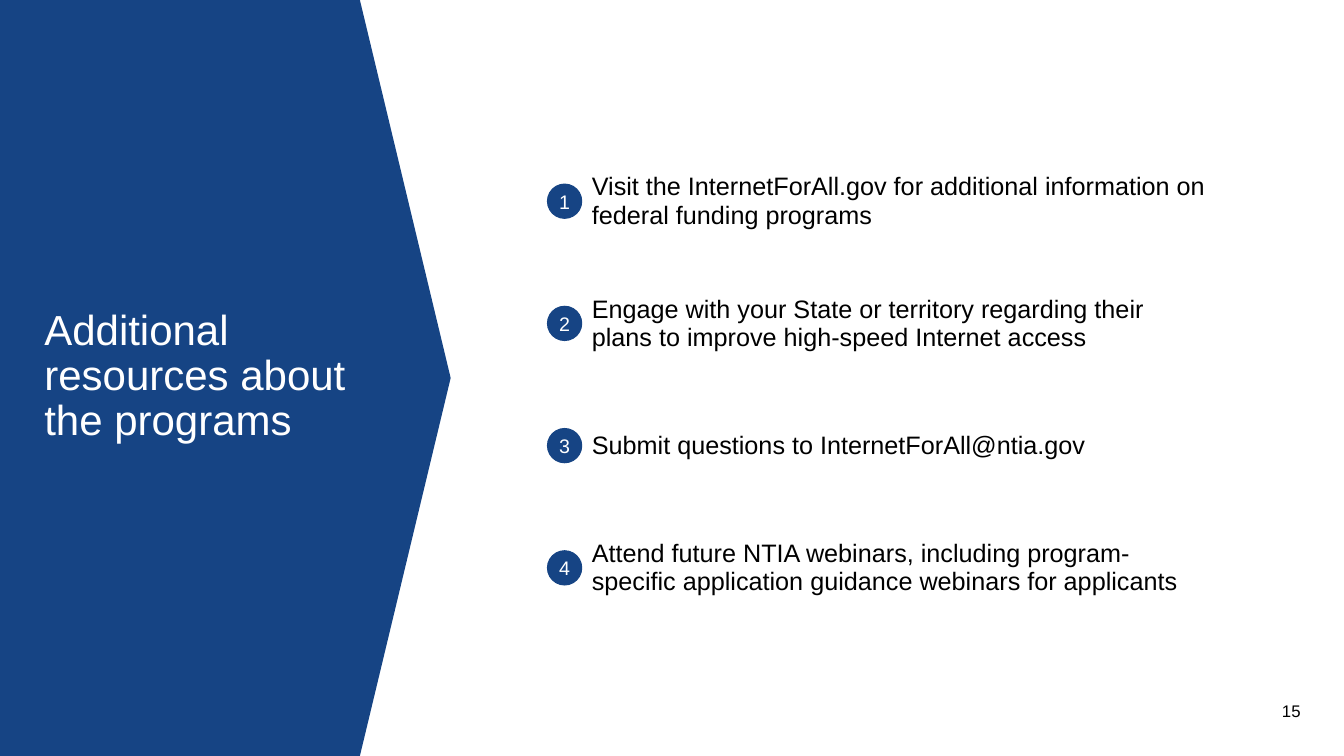
from pptx import Presentation
from pptx import util as u
from pptx.dml.color import RGBColor
from pptx.enum import shapes, text

TITLE = "Additional resources about the programs"
PAGE = "15"
STEPS = [
    "Visit the InternetForAll.gov for additional information on federal funding programs",
    "Engage with your State or territory regarding their plans to improve high-speed Internet access",
    "Submit questions to InternetForAll@ntia.gov",
    "Attend future NTIA webinars, including program-specific application guidance webinars for applicants",
]
COLORS = {"navy": "164484", "white": "FFFFFF", "black": "000000"}
FONT = "Arial"
SCALE = 9144  # EMU per px, 100 px to the inch
WIDE, HIGH = 1333, 750
EDGE, TIP = 357, 447
LEFT, TOP, TALL = 542, 139, 485
COLS = (35, 632)
DOT = 34


def px(*sizes):
    return [u.Emu(round(size * SCALE)) for size in sizes]


def color(name):
    return RGBColor.from_string(COLORS[name])


def paint(shape, name):
    shape.shadow.inherit = False
    shape.fill.solid()
    shape.fill.fore_color.rgb = color(name)


def write(frame, words, size, tint, align=text.PP_ALIGN.LEFT):
    frame.text = words
    para = frame.paragraphs[0]
    para.alignment = align
    font = para.runs[0].font
    font.name, font.size, font.color.rgb = FONT, u.Pt(size), color(tint)
    return para


def center(frame):
    """Remove the insets and anchor the text in the middle."""
    frame.margin_left = frame.margin_right = 0
    frame.margin_top = frame.margin_bottom = 0
    frame.vertical_anchor = text.MSO_ANCHOR.MIDDLE


def label(slide, box, *style):
    frame = slide.shapes.add_textbox(*px(*box)).text_frame
    frame.word_wrap = True
    center(frame)
    return write(frame, *style)


def add_panel(slide):
    build = slide.shapes.build_freeform(0, 0, scale=SCALE)
    build.add_line_segments([(EDGE, 0), (TIP, HIGH / 2), (EDGE, HIGH), (0, HIGH)])
    panel = build.convert_to_shape()
    paint(panel, "navy")
    panel.line.fill.background()


def add_steps(slide):
    row = TALL / len(STEPS)
    table = slide.shapes.add_table(
        len(STEPS), len(COLS), *px(LEFT, TOP, sum(COLS), TALL)).table
    table.first_row = table.horz_banding = False
    for col, width in zip(table.columns, px(*COLS)):
        col.width = width
    for i, step in enumerate(STEPS):
        for cell in table.rows[i].cells:
            cell.fill.background()
            cell.vertical_anchor = text.MSO_ANCHOR.MIDDLE
        write(table.cell(i, 1).text_frame, step, 18, "black")

        y = TOP + row * (i + 0.5) - DOT / 2
        dot = slide.shapes.add_shape(
            shapes.MSO_SHAPE.OVAL, *px(LEFT + 1, y, DOT, DOT))
        paint(dot, "navy")
        dot.line.color.rgb = color("navy")
        dot.line.width = u.Pt(0.75)
        center(dot.text_frame)
        write(dot.text_frame, str(i + 1), 14, "white", text.PP_ALIGN.CENTER)


def main():
    deck = Presentation()
    deck.slide_width, deck.slide_height = px(WIDE, HIGH)
    slide = deck.slides.add_slide(deck.slide_layouts[6])
    add_panel(slide)
    label(slide, (1217, 696, 73, 18), PAGE, 12, "black", text.PP_ALIGN.RIGHT)
    title = label(slide, (44, 302, 326, 144), TITLE, 30, "white")
    title.line_spacing = 0.9
    add_steps(slide)
    deck.save("out.pptx")


if __name__ == "__main__":
    main()
